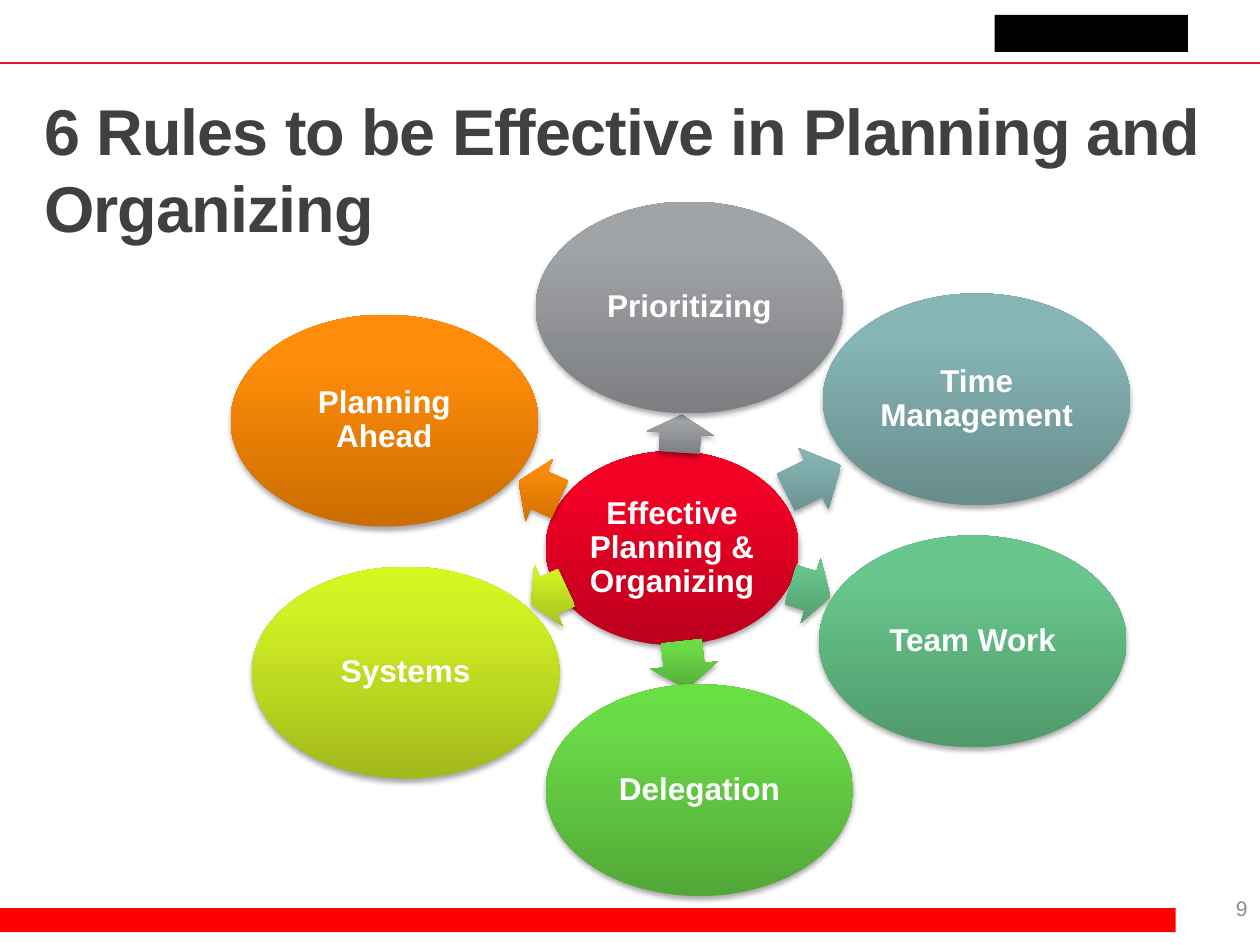
from math import atan2, degrees

from lxml import etree
from pptx import Presentation
from pptx.dml.color import RGBColor
from pptx.enum.shapes import MSO_CONNECTOR, MSO_SHAPE
from pptx.enum.text import MSO_ANCHOR, PP_ALIGN
from pptx.oxml.ns import qn
from pptx.util import Cm, Pt

OVAL, ARROW, RECTANGLE = MSO_SHAPE.OVAL, MSO_SHAPE.RIGHT_ARROW, MSO_SHAPE.RECTANGLE
MIDDLE, TOP = MSO_ANCHOR.MIDDLE, MSO_ANCHOR.TOP
LEFT, CENTER, RIGHT = PP_ALIGN.LEFT, PP_ALIGN.CENTER, PP_ALIGN.RIGHT

# Content: centres are in cm, gradients run from bottom to top
TITLE = "6 Rules to be Effective in Planning and Organizing"
PAGE_NUMBER = "9"
HUB = ("Effective Planning & Organizing", (13.55, 11.05), ("BB001D", "F30025", "F40025"))
RULES = [  # label, oval centre, arrow centre, arrow length, gradient
    ("Prioritizing", (13.9, 6.2), (13.72, 8.74), 0.76, ("7C7E81", "A1A4A7", "A2A4A8")),
    ("Time Management", (19.69, 8.05), (16.4, 9.65), 1.24, ("678C8B", "86B5B5", "86B7B6")),
    ("Team Work", (19.61, 12.93), (16.34, 11.91), 0.84, ("50996B", "68C68C", "67C98C")),
    ("Delegation", (14.1, 15.93), (13.79, 13.41), 0.97, ("52A837", "6ADA47", "69DE45")),
    ("Systems", (8.18, 13.56), (11.06, 12.01), 0.79, ("A2B91B", "D2F124", "D6F620")),
    ("Planning Ahead", (7.75, 8.48), (10.87, 9.88), 0.91, ("CB6D00", "FF8D09", "FF8E0A")),
]
HUB_SIZE, RULE_SIZE, ARROW_HEIGHT = (5.1, 3.91), (6.2, 4.27), 1.37
STOPS = (0, 80000, 100000)

deck = Presentation()
deck.slide_width, deck.slide_height = Cm(25.4), Cm(19.05)
page = deck.slides.add_slide(deck.slide_layouts[6])


def color(value):
    return RGBColor.from_string(value)


def add_color(parent, value):
    return etree.SubElement(parent, qn("a:srgbClr"), val=value)


def write(shape, text, size, ink, bold, align, anchor):
    frame = shape.text_frame
    frame.word_wrap = True
    frame.vertical_anchor = anchor
    frame.text = text
    para = frame.paragraphs[0]
    para.alignment = align
    font = para.runs[0].font
    font.name, font.size, font.bold = "Arial", Pt(size), bold
    font.color.rgb = color(ink)
    return para


def add_text(box, *style):
    return write(page.shapes.add_textbox(*map(Cm, box)), *style)


def add_plain(box, fill):
    shape = page.shapes.add_shape(RECTANGLE, *map(Cm, box))
    shape.shadow.inherit = False
    shape.fill.solid()
    shape.fill.fore_color.rgb = color(fill)
    shape.line.fill.background()


def add_glossy(kind, center, size, colors):
    """Shape around a centre with a vertical gradient and a soft shadow."""
    (x, y), (width, height) = center, size
    shape = page.shapes.add_shape(
        kind, Cm(x - width / 2), Cm(y - height / 2), Cm(width), Cm(height))
    shape.line.fill.background()
    shape.fill.gradient()
    shape.fill.gradient_angle = 90
    properties = shape._element.spPr
    gradient = properties.find(qn("a:gradFill"))
    gradient.set("rotWithShape", "0")
    stops = gradient.find(qn("a:gsLst"))
    for stop in list(stops):
        stops.remove(stop)
    for position, value in zip(STOPS, colors):
        add_color(etree.SubElement(stops, qn("a:gs"), pos=str(position)), value)
    shape.shadow.inherit = False
    shadow = etree.SubElement(
        properties.find(qn("a:effectLst")), qn("a:outerShdw"),
        blurRad=str(Pt(3.1)), dist=str(Pt(1.8)), dir="5400000", rotWithShape="0")
    etree.SubElement(add_color(shadow, "000000"), qn("a:alpha"), val="35000")
    return shape


def add_oval(label, center, size, colors):
    shape = add_glossy(OVAL, center, size, colors)
    frame = shape.text_frame
    frame.margin_left = frame.margin_right = Cm(0.08)
    frame.margin_top = frame.margin_bottom = Cm(0.08)
    write(shape, label, 18, "FFFFFF", True, CENTER, MIDDLE).line_spacing = 0.9


# Frame: plain block in the header, footer bar, header line
add_plain((20.05, 0.3, 3.9, 0.75), "000000")
add_plain((0, 18.31, 23.7, 0.48), "FF0000")
rule = page.shapes.add_connector(MSO_CONNECTOR.STRAIGHT, 0, Cm(1.27), Cm(25.4), Cm(1.27))
rule.line.color.rgb = color("E31332")
rule.line.width = Pt(0.75)
etree.SubElement(rule._element.spPr, qn("a:effectLst"))

# Page number and title
add_text((20.12, 17.68, 5.28, 1.27), PAGE_NUMBER, 12, "8C8C8C", False, RIGHT, MIDDLE)
title = add_text((0.64, 1.7, 23.93, 3.43), TITLE, 37, "404040", True, LEFT, TOP)
title.runs[0].font._element.set("spc", "-50")

# Hub, then each arrow pointing from the hub to its rule
hub_label, hub_center, hub_colors = HUB
add_oval(hub_label, hub_center, HUB_SIZE, hub_colors)
for label, center, arrow_center, length, colors in RULES:
    arrow = add_glossy(ARROW, arrow_center, (length, ARROW_HEIGHT), colors)
    arrow.adjustments[0], arrow.adjustments[1] = 0.6, 0.5
    arrow.rotation = degrees(atan2(center[1] - hub_center[1], center[0] - hub_center[0])) % 360
    add_oval(label, center, RULE_SIZE, colors)

deck.save("out.pptx")
